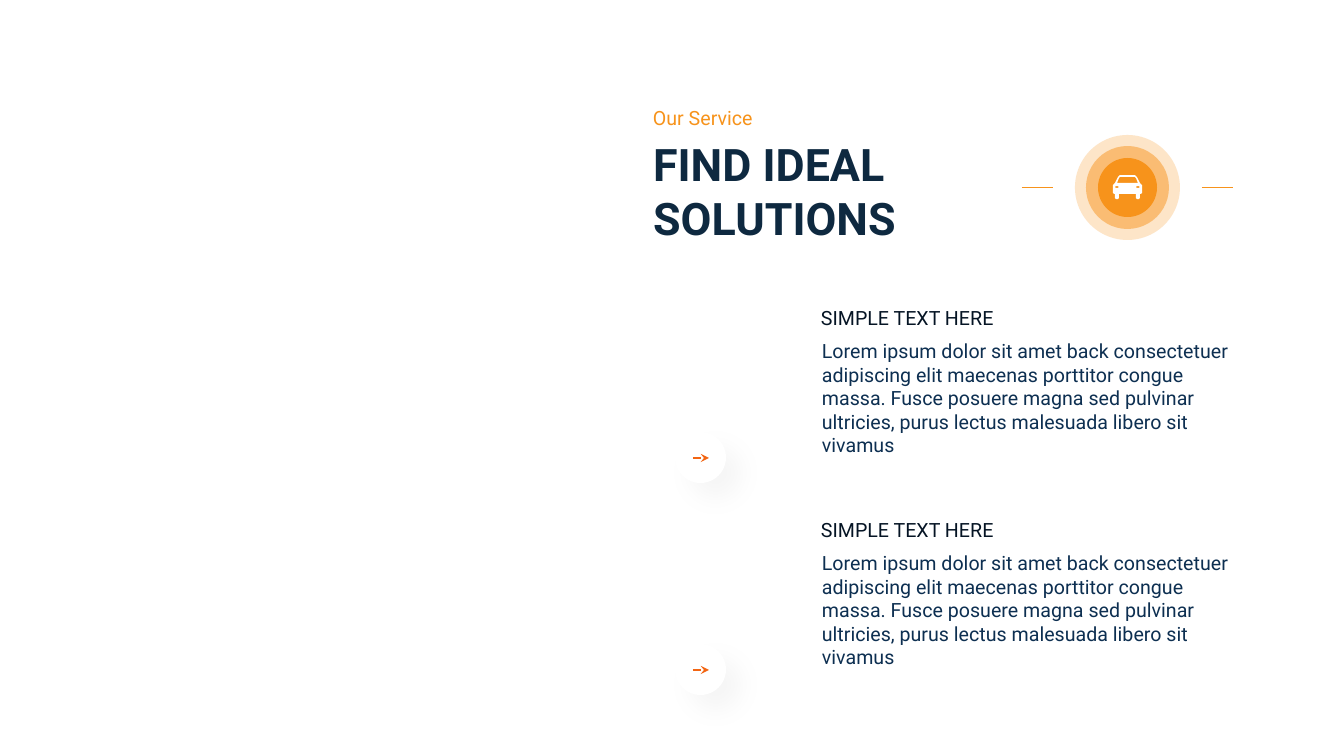
from pptx import Presentation
from pptx.dml.color import RGBColor
from pptx.enum.shapes import MSO_CONNECTOR as LINE, MSO_SHAPE as SHAPE
from pptx.enum.text import MSO_ANCHOR, MSO_AUTO_SIZE, PP_ALIGN
from pptx.oxml.ns import qn
from pptx.util import Emu, Pt
from lxml.etree import SubElement

PX = 914400 / 100.8
FONT = "Roboto"
COLORS = {
    "white": "FFFFFF",
    "title": "0E2940",
    "accent": "F7931B",
    "heading": "051424",
    "body": "0D2F51",
    "arrow": "F26513",
    "shadow": "000000",
}
LOREM = (
    "Lorem ipsum dolor sit amet back consectetuer adipiscing elit maecenas "
    "porttitor congue massa. Fusce posuere magna sed pulvinar ultricies, "
    "purus lectus malesuada libero sit vivamus"
)
SERVICES = [("SIMPLE TEXT HERE", LOREM), ("SIMPLE TEXT HERE", LOREM)]
CAR_WIDTH = 29
CAR_HALF = [(6, 19), (6, 23), (5, 24), (3, 24), (2, 23), (2, 19), (1, 19),
            (0, 18), (0, 10), (2, 8), (5, 2), (7, 0)]
WINDOW_HALF = [(4, 8), (6, 3), (7, 2)]
HEADLIGHT = [(2, 12), (3, 11), (5, 11), (6, 12), (5, 13), (3, 13)]


def px(n):
    return Emu(round(n * PX))


def rgb(name):
    return RGBColor.from_string(COLORS[name])


def write(sp, text, size, color, bold=False):
    tf = sp.text_frame
    tf.word_wrap = True
    tf.auto_size = MSO_AUTO_SIZE.SHAPE_TO_FIT_TEXT
    tf.vertical_anchor = MSO_ANCHOR.TOP
    p = tf.paragraphs[0]
    p.alignment = PP_ALIGN.LEFT
    r = p.add_run()
    r.text = text
    r.font.name = FONT
    r.font.size = Pt(size)
    r.font.bold = bold
    r.font.color.rgb = rgb(color)


def add_text(shapes, x, y, w, h, text, color):
    sp = shapes.add_textbox(px(x), px(y), px(w), px(h))
    write(sp, text, 14, color)


def paint(sp, color, alpha=100):
    sp.shadow.inherit = False
    sp.fill.solid()
    sp.fill.fore_color.rgb = rgb(color)
    sp.line.fill.background()
    if alpha < 100:
        clr = sp._element.spPr.find(".//" + qn("a:srgbClr"))
        SubElement(clr, qn("a:alpha"), val=str(alpha * 1000))


def add_circle(shapes, x, y, d, color, alpha=100):
    sp = shapes.add_shape(SHAPE.OVAL, px(x), px(y), px(d), px(d))
    paint(sp, color, alpha)
    return sp


def add_line(shapes, x, y, length, color, width):
    s = shapes.add_connector(LINE.STRAIGHT, px(x), px(y), px(x + length), px(y))
    s.line.color.rgb = rgb(color)
    s.line.width = Pt(width)
    SubElement(s._element.spPr, qn("a:effectLst"))
    return s


def soften(sp):
    effects = sp._element.spPr.find(qn("a:effectLst"))
    shadow = SubElement(effects, qn("a:outerShdw"), blurRad=str(Pt(18)),
                        dist=str(Pt(15)), dir=str(45 * 60000),
                        algn="tl", rotWithShape="0")
    clr = SubElement(shadow, qn("a:srgbClr"), val=COLORS["shadow"])
    SubElement(clr, qn("a:alpha"), val="4000")


def mirror(points):
    return [(CAR_WIDTH - x, y) for x, y in reversed(points)]


def add_heading(s, x, y, w, h):
    title = s.shapes.title
    title.left, title.top = px(x), px(y + 31)
    title.width, title.height = px(w), px(h - 31)
    write(title, "FIND IDEAL SOLUTIONS", 32, "title", True)
    add_text(s.shapes, x, y, 217, 34, "Our Service", "accent")


def add_service(s, x, y, w, h, heading, body):
    add_text(s.shapes, x + 137, y + 33, w - 137, h - 33, body, "body")
    add_text(s.shapes, x + 136, y, 290, 34, heading, "heading")
    badge = s.shapes.add_group_shape().shapes
    soften(add_circle(badge, x, y + 131, 51, "white"))
    arrow = add_line(badge, x + 18, y + 157, 16, "arrow", 1.75)
    SubElement(arrow.line._get_or_add_ln(), qn("a:tailEnd"), type="stealth")


def add_car(shapes, x, y):
    contours = [CAR_HALF + mirror(CAR_HALF), WINDOW_HALF + mirror(WINDOW_HALF),
                HEADLIGHT, mirror(HEADLIGHT)]
    pen = shapes.build_freeform(*contours[0][0], scale=PX)
    for i, points in enumerate(contours):
        if i:
            pen.move_to(*points[0])
        pen.add_line_segments(points[1:], close=True)
    paint(pen.convert_to_shape(px(x), px(y)), "white")


def add_icon(s, x, y, w, h):
    icon = s.shapes.add_group_shape().shapes
    dash = 31
    left = x + (w - h) // 2
    add_line(icon, x, y + h / 2, dash, "accent", 1)
    for inset, alpha in ((0, 24), (11, 49), (23, 100)):
        add_circle(icon, left + inset, y + inset, h - 2 * inset, "accent", alpha)
    add_car(icon, x + (w - CAR_WIDTH) // 2, y + 40)
    add_line(icon, x + w - dash, y + h / 2, dash, "accent", 1)


def main():
    prs = Presentation()
    prs.slide_width, prs.slide_height = px(1344), px(756)
    s = prs.slides.add_slide(prs.slide_layouts[5])
    add_heading(s, 643, 101, 381, 150)
    for i, (heading, body) in enumerate(SERVICES):
        add_service(s, 675, 301 + 212 * i, 580, 162, heading, body)
    add_icon(s, 1022, 135, 211, 105)
    prs.save("out.pptx")


if __name__ == "__main__":
    main()
